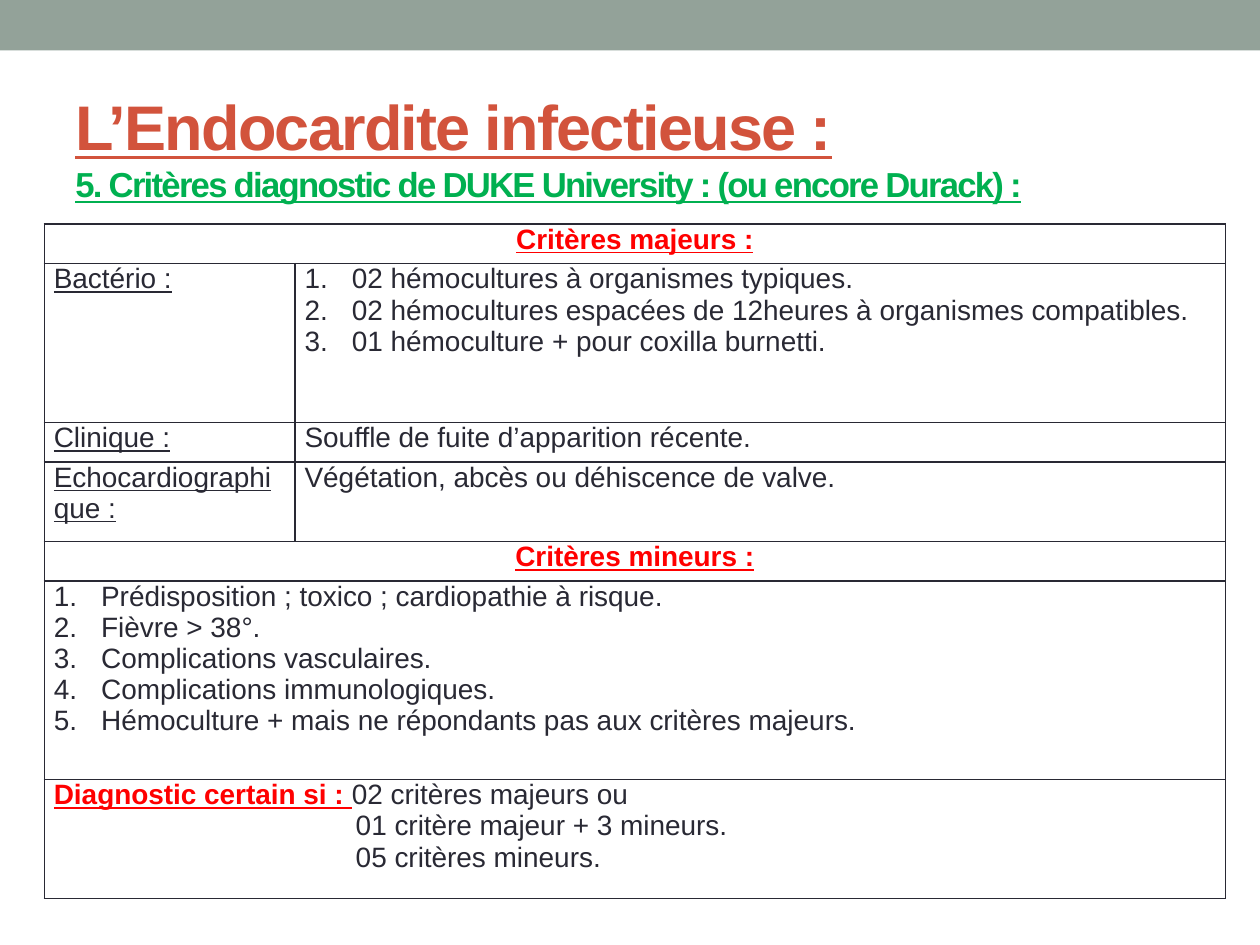
from dataclasses import dataclass

import pptx
import pptx.dml.color
import pptx.enum.shapes
import pptx.enum.text
import pptx.oxml
import pptx.oxml.ns
import pptx.util

Pt = pptx.util.Pt
RGBColor = pptx.dml.color.RGBColor
Align = pptx.enum.text.PP_ALIGN

SAGE = RGBColor(0x93, 0xA2, 0x99)
BRICK = RGBColor(0xD2, 0x53, 0x3C)
GREEN = RGBColor(0x00, 0xB0, 0x50)
RED = RGBColor(0xFF, 0x00, 0x00)
INK = RGBColor(0x29, 0x29, 0x34)
FONT = "Arial"
ROW_UNIT = 22.68
LIST_INDENT = 27
VERDICT_INDENT = 172.5


@dataclass(frozen=True)
class TextRun:
    text: str
    color: RGBColor = INK
    bold: bool = False
    underline: bool = False
    size: float = 16
    spacing: int = 0


@dataclass(frozen=True)
class Line:
    runs: tuple[TextRun, ...]
    align: Align = Align.LEFT
    indent: float = 0
    numbered: bool = False


@dataclass(frozen=True)
class Row:
    units: int
    cells: tuple[tuple[Line, ...], ...]


def heading(text: str) -> tuple[Line, ...]:
    return (Line((TextRun(text, RED, True, True),), Align.CENTER),)


def label(text: str) -> tuple[Line, ...]:
    return (Line((TextRun(text, underline=True),)),)


def plain(text: str, indent: float = 0) -> Line:
    return Line((TextRun(text),), indent=indent)


def numbered(*texts: str) -> tuple[Line, ...]:
    return tuple(
        Line((TextRun(text),), indent=LIST_INDENT, numbered=True) for text in texts
    )


TITLE = TextRun("L’Endocardite infectieuse\u00a0:".replace("\u00a0", " "), BRICK, True, True, 36, -100)
SUBTITLE = TextRun(
    "5. Critères diagnostic de DUKE University : (ou encore Durack) :",
    GREEN, True, True, 19.8, -100,
)

ROWS = (
    Row(1, (heading("Critères majeurs :"),)),
    Row(4, (label("Bactério :"), numbered(
        "02 hémocultures à organismes typiques.",
        "02 hémocultures espacées de 12heures à organismes compatibles.",
        "01 hémoculture + pour coxilla burnetti.",
    ))),
    Row(1, (label("Clinique :"), (plain("Souffle de fuite d’apparition récente."),))),
    Row(2, (
        label("Echocardiographique :"),
        (plain("Végétation, abcès ou déhiscence de valve."),),
    )),
    Row(1, (heading("Critères mineurs :"),)),
    Row(5, (numbered(
        "Prédisposition ; toxico ; cardiopathie à risque.",
        "Fièvre > 38°.",
        "Complications vasculaires.",
        "Complications immunologiques.",
        "Hémoculture + mais ne répondants pas aux critères majeurs.",
    ),)),
    Row(3, ((
        Line((
            TextRun("Diagnostic certain si : ", RED, True, True),
            TextRun("02 critères majeurs ou"),
        )),
        plain("01 critère majeur + 3 mineurs.", VERDICT_INDENT),
        plain("05 critères mineurs.", VERDICT_INDENT),
    ),)),
)


def add_run(paragraph, content: TextRun) -> None:
    run = paragraph.add_run()
    run.text = content.text
    run.font.name = FONT
    run.font.size = Pt(content.size)
    run.font.bold = content.bold
    run.font.underline = content.underline
    run.font.color.rgb = content.color
    if content.spacing:
        run.font._element.set("spc", str(content.spacing))


def write_lines(text_frame, lines: tuple[Line, ...]) -> None:
    for index, line in enumerate(lines):
        paragraph = text_frame.paragraphs[0] if index == 0 else text_frame.add_paragraph()
        paragraph.alignment = line.align
        properties = paragraph._p.get_or_add_pPr()
        properties.set("marL", str(Pt(line.indent)))
        if line.numbered:
            properties.set("indent", str(-Pt(line.indent)))
            bullet = pptx.oxml.parse_xml(
                f'<a:buAutoNum {pptx.oxml.ns.nsdecls("a")} type="arabicPeriod"/>'
            )
            properties.append(bullet)
        for content in line.runs:
            add_run(paragraph, content)


def style_cell(cell) -> None:
    cell.margin_left = cell.margin_right = Pt(5.4)
    cell.margin_top = cell.margin_bottom = Pt(0)
    properties = cell._tc.get_or_add_tcPr()
    for side in ("lnL", "lnR", "lnT", "lnB"):
        properties.append(pptx.oxml.parse_xml(
            f'<a:{side} {pptx.oxml.ns.nsdecls("a")} w="{Pt(1)}"><a:solidFill>'
            f'<a:srgbClr val="{INK}"/></a:solidFill></a:{side}>'
        ))
    cell.fill.background()


def add_band(slide) -> None:
    band = slide.shapes.add_shape(
        pptx.enum.shapes.MSO_SHAPE.RECTANGLE, Pt(0), Pt(0), Pt(720), Pt(28.8)
    )
    band.shadow.inherit = False
    band.fill.solid()
    band.fill.fore_color.rgb = SAGE
    band.line.fill.background()


def add_title(slide) -> None:
    text_frame = slide.shapes.add_textbox(Pt(36), Pt(41.8), Pt(648), Pt(77.8)).text_frame
    text_frame.word_wrap = True
    text_frame.vertical_anchor = pptx.enum.text.MSO_ANCHOR.MIDDLE
    text_frame.margin_top = Pt(9)
    paragraph = text_frame.paragraphs[0]
    add_run(paragraph, TITLE)
    paragraph.add_line_break()
    add_run(paragraph, SUBTITLE)


def add_criteria_table(slide) -> None:
    height = ROW_UNIT * sum(row.units for row in ROWS)
    table = slide.shapes.add_table(
        len(ROWS), 2, Pt(25.4), Pt(128), Pt(674.8), Pt(height)
    ).table
    table.first_row = table.horz_banding = False
    for column, width in zip(table.columns, (143.3, 531.5)):
        column.width = Pt(width)
    for index, row in enumerate(ROWS):
        table.rows[index].height = Pt(ROW_UNIT * row.units)
        if len(row.cells) == 1:
            table.cell(index, 0).merge(table.cell(index, 1))
        for column in range(2):
            style_cell(table.cell(index, column))
        for column, lines in enumerate(row.cells):
            write_lines(table.cell(index, column).text_frame, lines)


def main() -> None:
    presentation = pptx.Presentation()
    presentation.slide_width = Pt(720)
    presentation.slide_height = Pt(540)
    slide = presentation.slides.add_slide(presentation.slide_layouts[6])
    add_band(slide)
    add_title(slide)
    add_criteria_table(slide)
    presentation.save("out.pptx")


if __name__ == "__main__":
    main()
